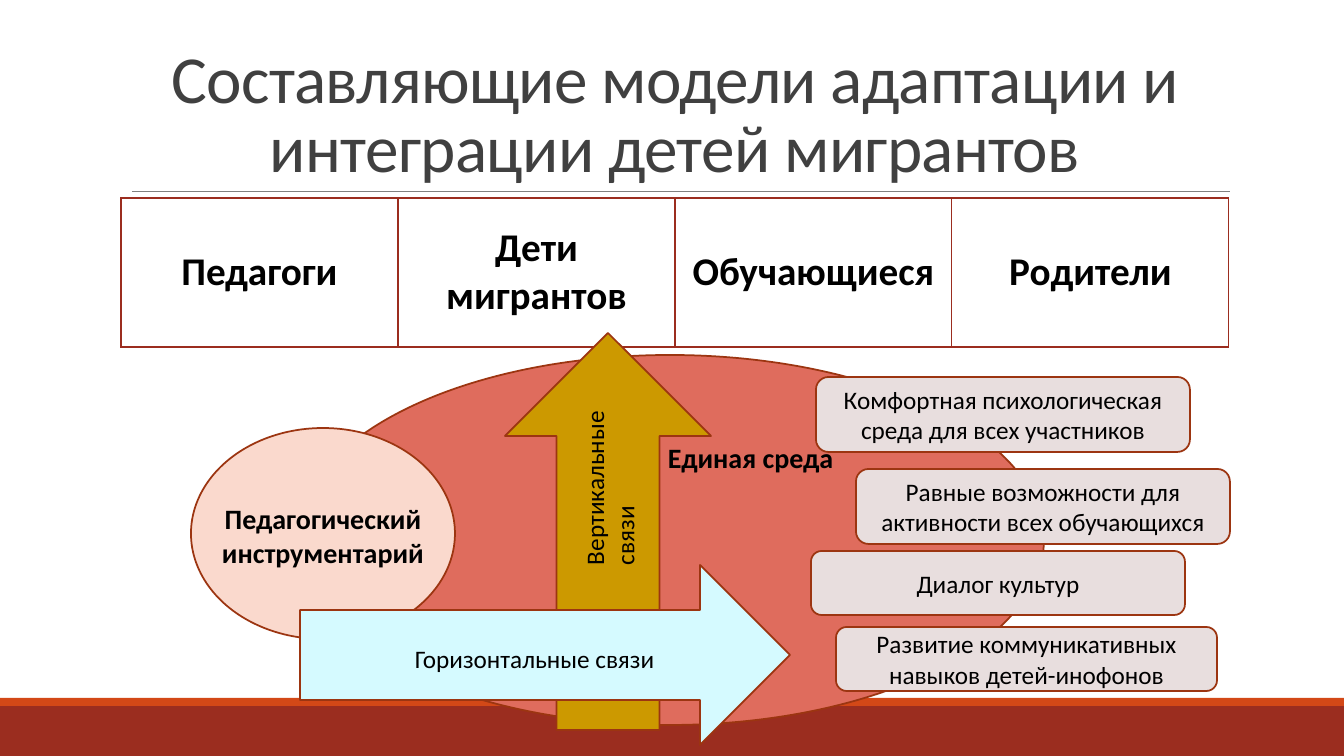
from lxml import etree
from pptx import Presentation
from pptx import util as u
from pptx.dml.color import RGBColor
from pptx.enum import shapes, text
from pptx.oxml import ns

WHITE = RGBColor(0xFF, 0xFF, 0xFF)
BLACK = RGBColor(0x00, 0x00, 0x00)
TITLE_GREY = RGBColor(0x40, 0x40, 0x40)
RULE_GREY = RGBColor(0x80, 0x80, 0x80)
BRICK = RGBColor(0x9B, 0x2D, 0x1F)
ORANGE = RGBColor(0xD3, 0x48, 0x17)
OUTLINE = RGBColor(0x9C, 0x35, 0x11)
CORAL = RGBColor(0xDF, 0x6C, 0x5D)
PEACH = RGBColor(0xFA, 0xD9, 0xCD)
GOLD = RGBColor(0xCC, 0x99, 0x00)
ICE = RGBColor(0xD5, 0xFA, 0xFF)
ROSE = RGBColor(0xE8, 0xDE, 0xDE)

KIND = shapes.MSO_SHAPE
CENTER = text.PP_ALIGN.CENTER
LEFT = text.PP_ALIGN.LEFT
MIDDLE = text.MSO_ANCHOR.MIDDLE


def px(*lengths):
    return [u.Emu(round(length * 12192000 / 1344)) for length in lengths]


class Painter:
    """Draws styled elements on one slide, measured in px."""

    font = "Calibri"

    def __init__(self, page):
        self.page = page

    def add_words(self, frame, words, size, bold=False, color=BLACK, align=CENTER):
        frame.word_wrap = True
        para = frame.paragraphs[0]
        para.alignment = align
        span = para.add_run()
        span.text = words
        span.font.name = self.font
        span.font.size = u.Pt(size)
        span.font.bold = bold
        span.font.color.rgb = color
        return para

    def shape(self, kind, place, fill, outline=OUTLINE):
        shape = self.page.shapes.add_shape(kind, *px(*place))
        shape.shadow.inherit = False
        shape.fill.solid()
        shape.fill.fore_color.rgb = fill
        if outline is None:
            shape.line.fill.background()
        else:
            shape.line.color.rgb = outline
            shape.line.width = u.Pt(1.25)
        return shape

    def card(self, place, words):
        frame = self.shape(KIND.ROUNDED_RECTANGLE, place, ROSE).text_frame
        frame.vertical_anchor = MIDDLE
        self.add_words(frame, words, 18)

    def label(self, place, words, size, bold=False, align=LEFT, upward=False):
        box = self.page.shapes.add_textbox(*px(*place))
        self.add_words(box.text_frame, words, size, bold, align=align)
        if upward:
            box.element.txBody.bodyPr.set("vert", "vert270")

    def title(self, place, words):
        box = self.page.shapes.add_textbox(*px(*place))
        box.text_frame.vertical_anchor = text.MSO_ANCHOR.BOTTOM
        para = self.add_words(box.text_frame, words, 48, color=TITLE_GREY)
        para.line_spacing = 0.85
        for properties in box.element.iter(ns.qn("a:rPr")):
            properties.set("spc", "-50")

    def rule(self, left, top, right):
        line = self.page.shapes.add_connector(
            shapes.MSO_CONNECTOR.STRAIGHT, *px(left, top, right, top))
        line.line.color.rgb = RULE_GREY
        line.line.width = u.Pt(0.5)
        etree.SubElement(line.element.spPr, ns.qn("a:effectLst"))

    def border(self, cell, side, points):
        properties = cell._tc.get_or_add_tcPr()
        edge = etree.SubElement(
            properties, ns.qn(f"a:ln{side}"), w=str(int(u.Pt(points))))
        fill = etree.SubElement(edge, ns.qn("a:solidFill"))
        etree.SubElement(fill, ns.qn("a:srgbClr"), val=str(BRICK))

    def table(self, place, headings):
        grid = self.page.shapes.add_table(1, len(headings), *px(*place)).table
        grid.first_row = False
        grid.horz_banding = False
        for cell, heading in zip(grid.iter_cells(), headings):
            for side, points in (("L", 1), ("R", 1), ("T", 1), ("B", 2)):
                self.border(cell, side, points)
            cell.fill.solid()
            cell.fill.fore_color.rgb = WHITE
            cell.vertical_anchor = MIDDLE
            self.add_words(cell.text_frame, heading, 28, bold=True)


def main():
    deck = Presentation()
    deck.slide_width, deck.slide_height = px(1344, 756)
    painter = Painter(deck.slides.add_slide(deck.slide_layouts[6]))

    painter.shape(KIND.RECTANGLE, (0, 706, 1344, 50), BRICK, None)
    painter.shape(KIND.RECTANGLE, (0, 698, 1344, 8), ORANGE, None)
    painter.rule(132, 191, 1230)
    painter.shape(KIND.OVAL, (296, 355, 748, 370), CORAL)
    painter.label((658, 436, 315, 44), "Единая среда", 20, bold=True)
    painter.title((121, 31, 1108, 160),
                  "Составляющие модели адаптации и интеграции детей мигрантов")
    painter.table((121, 198, 1108, 149),
                  ("Педагоги", "Дети мигрантов", "Обучающиеся", "Родители"))

    painter.shape(KIND.OVAL, (191, 428, 264, 211), PEACH)
    painter.label((191, 497, 264, 112), "Педагогический инструментарий",
                  20, bold=True, align=CENTER)

    for place, words in (
        ((836, 627, 381, 64), "Развитие коммуникативных навыков детей-инофонов"),
        ((811, 551, 374, 64), "Диалог культур"),
        ((816, 377, 374, 75), "Комфортная психологическая среда для всех участников"),
        ((856, 469, 374, 75), "Равные возможности для активности всех обучающихся"),
    ):
        painter.card(place, words)

    painter.shape(KIND.UP_ARROW, (505, 333, 206, 397), GOLD)
    painter.label((574, 362, 82, 213), "Вертикальные связи", 18, upward=True)
    painter.shape(KIND.RIGHT_ARROW, (300, 565, 490, 180), ICE)
    painter.label((405, 638, 539, 40), "Горизонтальные связи", 18)

    deck.save("out.pptx")


if __name__ == "__main__":
    main()
